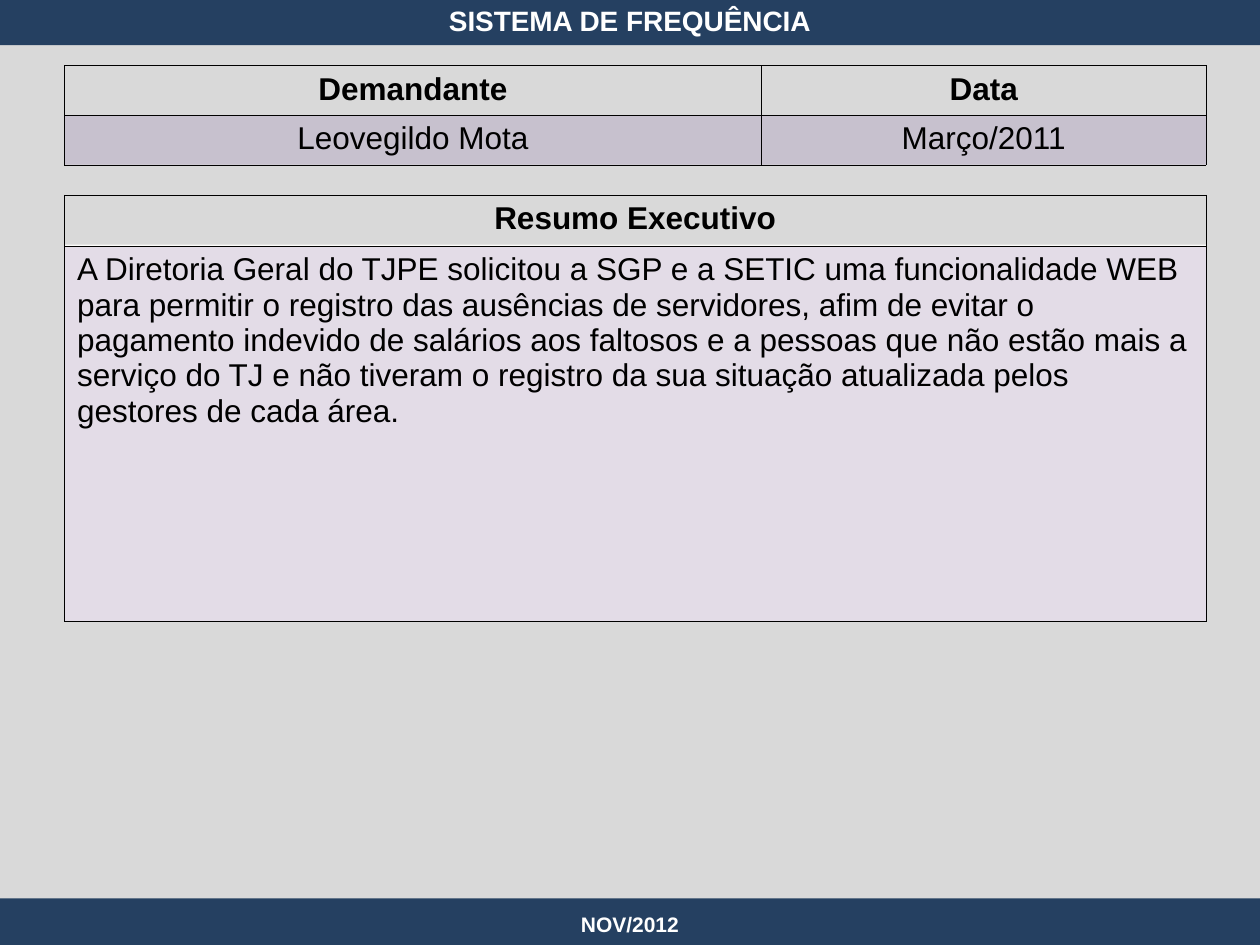
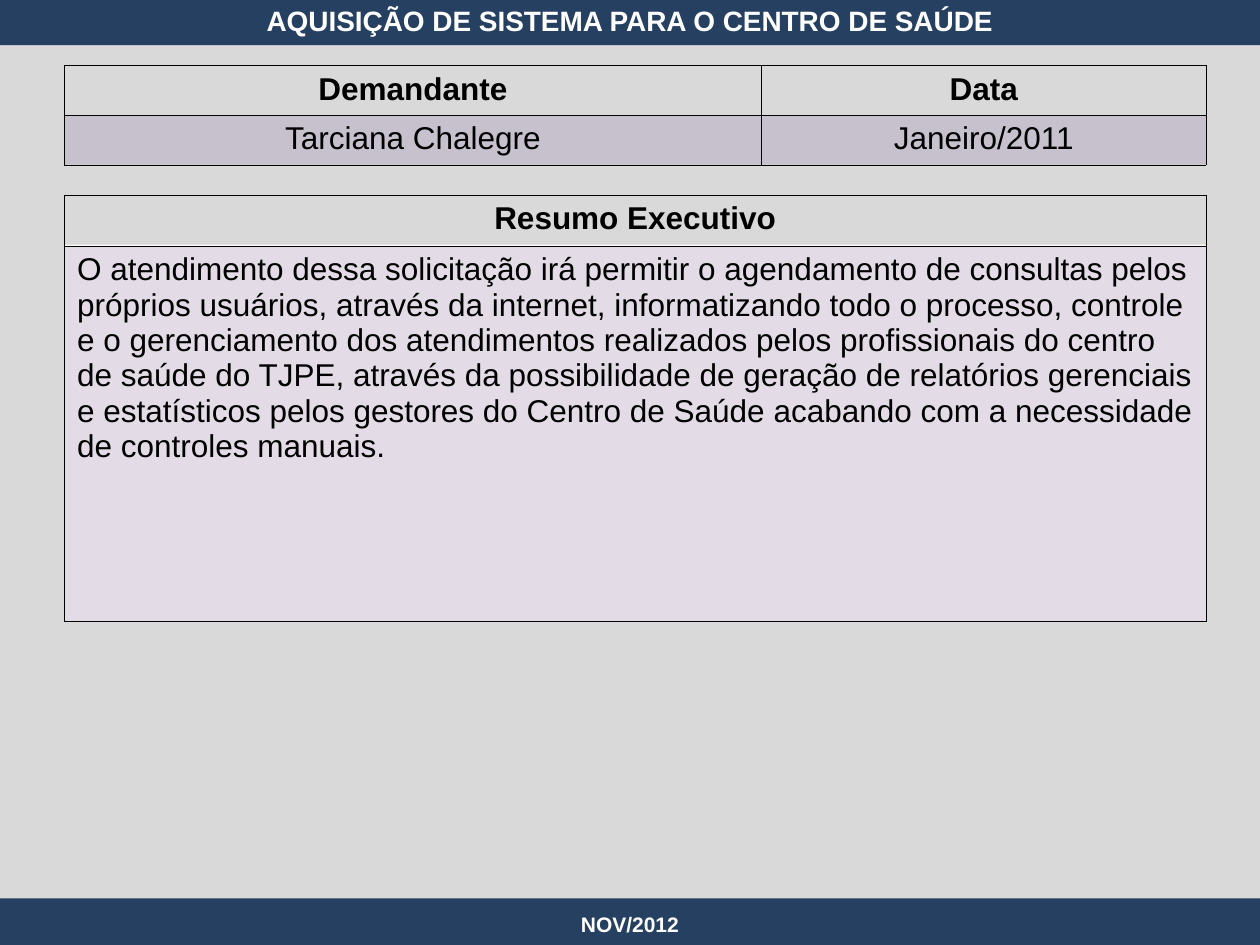
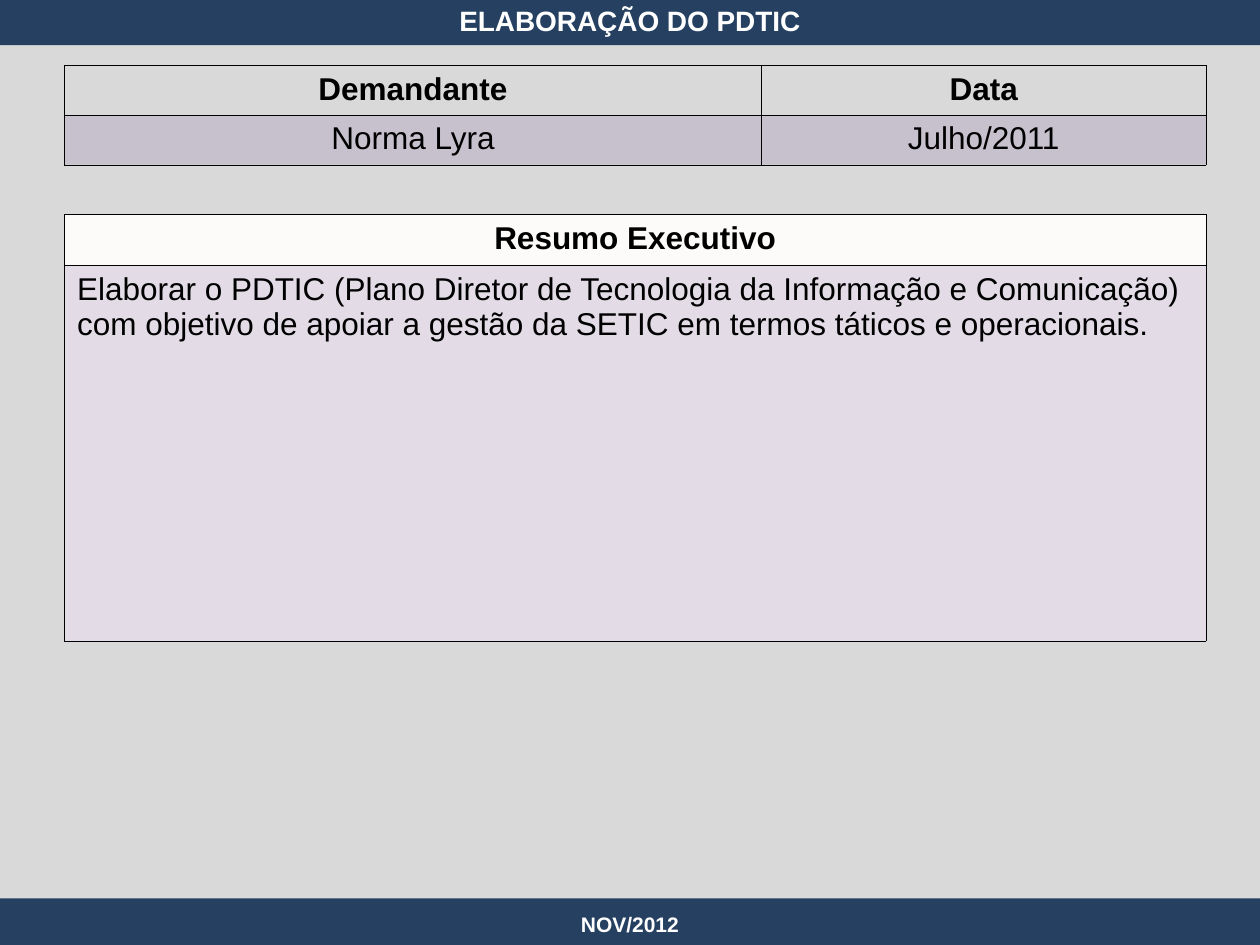
"""Builds the three demand summary slides and saves them as a deck."""
from dataclasses import dataclass

from lxml.etree import SubElement
from pptx import Presentation
from pptx.dml.color import RGBColor
from pptx.enum.shapes import MSO_SHAPE
from pptx.enum.text import MSO_ANCHOR, PP_ALIGN
from pptx.oxml import parse_xml
from pptx.oxml.ns import nsdecls, qn
from pptx.util import Cm, Pt


@dataclass(frozen=True)
class Theme:
    font: str = "Arial"
    ground: str = "D9D9D9"
    band: str = "254061"
    backing: str = "FCFBF9"
    tint: str = "8064A2"
    tint_percent: int = 20
    ink: str = "000000"
    light: str = "FFFFFF"
    title_size: int = 16
    table_size: int = 18
    footer_size: int = 12
    border_width: float = 0.25


@dataclass(frozen=True)
class Box:
    left: float
    top: float
    width: float
    height: float

    def lengths(self) -> tuple:
        return Cm(self.left), Cm(self.top), Cm(self.width), Cm(self.height)


@dataclass(frozen=True)
class Band:
    box: Box
    color: str


@dataclass(frozen=True)
class Grid:
    top: float
    columns: tuple
    rows: tuple
    align: PP_ALIGN


@dataclass(frozen=True)
class Demand:
    title: str
    requester: str
    date: str
    summary: str
    summary_top: float = 3.93
    backing_offset: float = 1.0


THEME = Theme()
PAGE_WIDTH, PAGE_HEIGHT = 25.4, 19.05
TABLE_LEFT, TABLE_WIDTH = 1.3, 23.01
SUMMARY_ROWS = (1.03, 7.57)
TITLE_BOX = Box(0, -0.28, PAGE_WIDTH, 1.4)
FOOTER_BOX = Box(0, 18.14, PAGE_WIDTH, 0.99)
BANDS = (
    Band(Box(0, 0.91, PAGE_WIDTH, 17.4), THEME.ground),
    Band(Box(0, 18.11, PAGE_WIDTH, 0.94), THEME.band),
    Band(Box(0, -0.03, PAGE_WIDTH, 0.94), THEME.band),
)
REQUEST_GRID = Grid(1.32, (14.05, 8.96), (1.0, 1.0), PP_ALIGN.CENTER)

DEMANDS = (
    Demand(
        "SISTEMA DE FREQUÊNCIA", "Leovegildo Mota", "Março/2011",
        "A Diretoria Geral do TJPE solicitou a SGP e a SETIC uma funcionalidade WEB "
        "para permitir o registro das ausências de servidores, afim de evitar o "
        "pagamento indevido de salários aos faltosos e a pessoas que não estão mais a "
        "serviço do TJ e não tiveram o registro da sua situação atualizada pelos "
        "gestores de cada área.",
    ),
    Demand(
        "AQUISIÇÃO DE SISTEMA PARA O CENTRO DE SAÚDE", "Tarciana Chalegre", "Janeiro/2011",
        "O atendimento dessa solicitação irá permitir o agendamento de consultas pelos "
        "próprios usuários, através da internet, informatizando todo o processo, controle "
        "e o gerenciamento dos atendimentos realizados pelos profissionais do centro "
        "de saúde do TJPE, através da possibilidade de geração de relatórios gerenciais "
        "e estatísticos pelos gestores do Centro de Saúde acabando com a necessidade "
        "de controles manuais.",
    ),
    Demand(
        "ELABORAÇÃO DO PDTIC", "Norma Lyra", "Julho/2011",
        "Elaborar o PDTIC (Plano Diretor de Tecnologia da Informação e Comunicação) "
        "com objetivo de apoiar a gestão da SETIC em termos táticos e operacionais.",
        summary_top=4.32, backing_offset=0,
    ),
)


def write_text(frame, text: str, size: int, color: str, bold: bool, align: PP_ALIGN):
    frame.word_wrap = True
    para = frame.paragraphs[0]
    para.alignment = align
    font = para.font
    font.name, font.size, font.bold = THEME.font, Pt(size), bold
    font.color.rgb = RGBColor.from_string(color)
    span = para.add_run()
    span.text = text
    return span


def write_heading(frame, text: str, size: int) -> None:
    span = write_text(frame, text, size, THEME.light, True, PP_ALIGN.CENTER)
    frame.vertical_anchor = MSO_ANCHOR.MIDDLE
    span._r.get_or_add_rPr().append(parse_xml(
        f'<a:effectLst {nsdecls("a")}><a:outerShdw blurRad="38100" dist="38100" dir="2700000">'
        f'<a:srgbClr val="{THEME.ink}"><a:alpha val="43000"/></a:srgbClr>'
        '</a:outerShdw></a:effectLst>'))


def draw_rectangle(page, box: Box, color: str):
    shape = page.shapes.add_shape(MSO_SHAPE.RECTANGLE, *box.lengths())
    shape.shadow.inherit = False
    shape.fill.solid()
    shape.fill.fore_color.rgb = RGBColor.from_string(color)
    shape.line.fill.background()
    return shape


def move_bands_to_layout(page) -> None:
    shared = [draw_rectangle(page, band.box, band.color) for band in BANDS]
    footer = page.shapes.add_textbox(*FOOTER_BOX.lengths())
    write_heading(footer.text_frame, "NOV/2012", THEME.footer_size)
    tree = page.slide_layout.shapes._spTree
    for position, shape in enumerate([*shared, footer], start=2):
        tree.insert(position, shape._element)


def format_cell(cell, tinted: bool) -> None:
    if tinted:
        cell.fill.solid()
        cell.fill.fore_color.rgb = RGBColor.from_string(THEME.tint)
    else:
        cell.fill.background()
    properties = cell._tc.get_or_add_tcPr()
    for color in properties.iter(qn("a:srgbClr")):
        SubElement(color, qn("a:alpha"), val=str(THEME.tint_percent * 1000))
    for position, side in enumerate("LRTB"):
        properties.insert(position, parse_xml(
            f'<a:ln{side} {nsdecls("a")} w="{Pt(THEME.border_width)}"><a:solidFill>'
            f'<a:srgbClr val="{THEME.ink}"/></a:solidFill></a:ln{side}>'))


def draw_table(page, grid: Grid, content: tuple) -> None:
    box = Box(TABLE_LEFT, grid.top, TABLE_WIDTH, sum(grid.rows))
    table = page.shapes.add_table(len(grid.rows), len(grid.columns), *box.lengths()).table
    table.first_row = table.horz_banding = False
    style = table._tbl.tblPr.find(qn("a:tableStyleId"))
    style.text = "{2D5ABB26-0587-4C30-8999-92F81FD0307C}"
    for column, width in zip(table.columns, grid.columns):
        column.width = Cm(width)
    for index, (row, height) in enumerate(zip(table.rows, grid.rows)):
        row.height = Cm(height)
        header = index == 0
        for cell, text in zip(row.cells, content[index]):
            align = PP_ALIGN.CENTER if header else grid.align
            write_text(cell.text_frame, text, THEME.table_size, THEME.ink, header, align)
            format_cell(cell, tinted=not header)


def fill_page(page, demand: Demand) -> None:
    title = page.shapes.title
    title.left, title.top, title.width, title.height = TITLE_BOX.lengths()
    write_heading(title.text_frame, demand.title, THEME.title_size)
    offset = demand.backing_offset
    backing = Box(TABLE_LEFT, demand.summary_top + offset,
                  TABLE_WIDTH, sum(SUMMARY_ROWS) - offset)
    draw_rectangle(page, backing, THEME.backing)
    draw_table(page, REQUEST_GRID,
               (("Demandante", "Data"), (demand.requester, demand.date)))
    summary_grid = Grid(demand.summary_top, (TABLE_WIDTH,), SUMMARY_ROWS, PP_ALIGN.LEFT)
    draw_table(page, summary_grid, (("Resumo Executivo",), (demand.summary,)))


def main() -> None:
    deck = Presentation()
    deck.slide_width, deck.slide_height = Cm(PAGE_WIDTH), Cm(PAGE_HEIGHT)
    title_only = deck.slide_layouts[5]
    pages = [deck.slides.add_slide(title_only) for _ in DEMANDS]
    move_bands_to_layout(pages[0])
    for page, demand in zip(pages, DEMANDS):
        fill_page(page, demand)
    deck.save("out.pptx")


if __name__ == "__main__":
    main()
